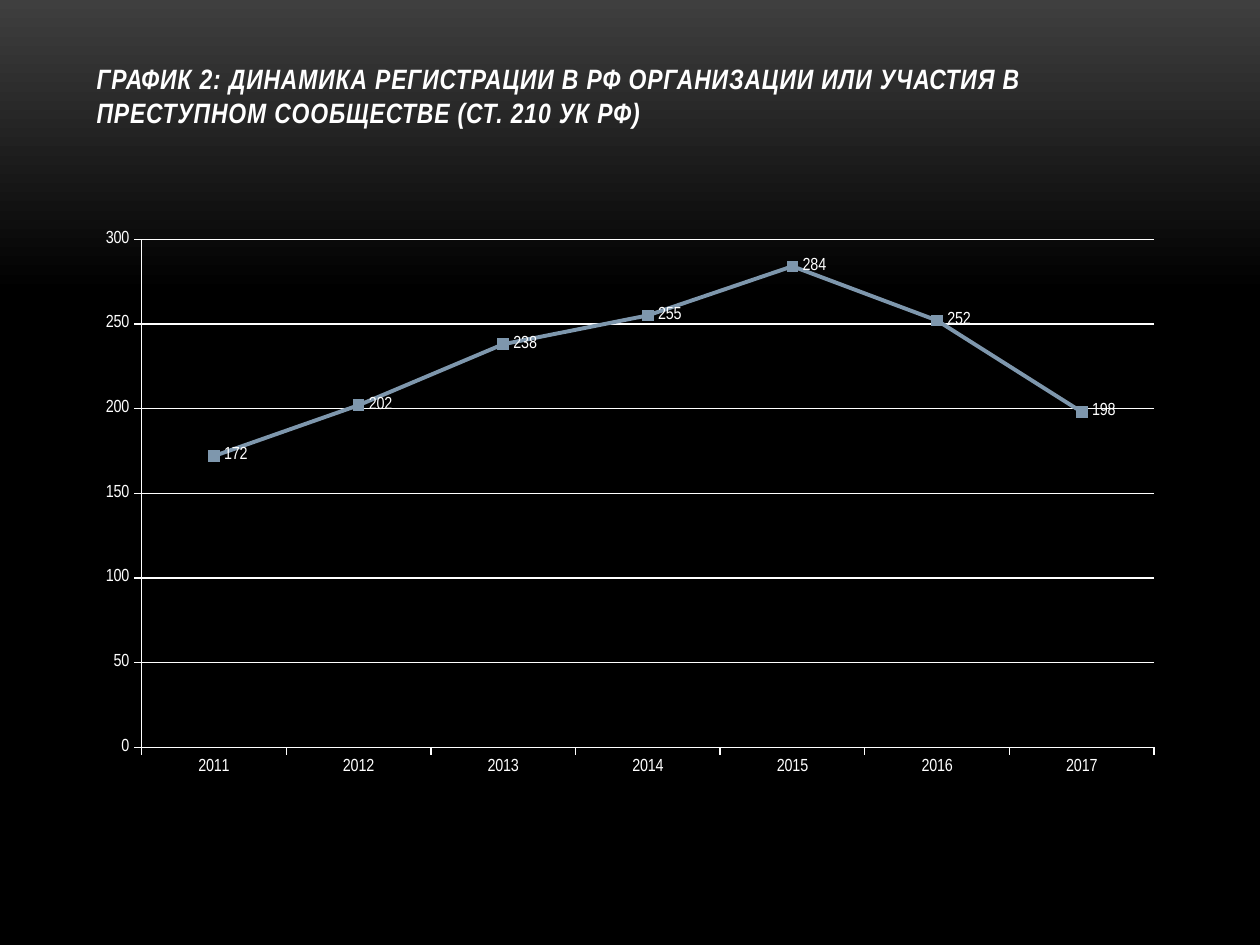
"""Build a slide with a line chart of registered cases by year."""
from dataclasses import dataclass

import pptx
import pptx.chart.data
import pptx.dml.color
import pptx.enum.chart
import pptx.enum.text
import pptx.util

EMU_PER_PX = 914400 // 126
FONT_NAME = "Arial Narrow"
COLORS = {"top": "3F3F3F", "base": "000000", "text": "FFFFFF", "line": "7E97AD"}
TITLE = (
    "ГРАФИК 2: ДИНАМИКА РЕГИСТРАЦИИ В РФ ОРГАНИЗАЦИИ ИЛИ УЧАСТИЯ В "
    "ПРЕСТУПНОМ СООБЩЕСТВЕ (СТ. 210 УК РФ)"
)
CASES = {
    "2011": 172, "2012": 202, "2013": 238, "2014": 255,
    "2015": 284, "2016": 252, "2017": 198,
}


@dataclass
class Box:
    left: int
    top: int
    width: int
    height: int

    def emu(self) -> tuple[int, int, int, int]:
        return px(self.left), px(self.top), px(self.width), px(self.height)


TITLE_BOX = Box(84, 38, 1092, 158)
CHART_BOX = Box(84, 220, 1092, 567)


def px(length: int) -> pptx.util.Emu:
    return pptx.util.Emu(length * EMU_PER_PX)


def color(name: str) -> pptx.dml.color.RGBColor:
    return pptx.dml.color.RGBColor.from_string(COLORS[name])


def paint_background(slide) -> None:
    fill = slide.background.fill
    fill.gradient()
    fill.gradient_angle = 270
    for stop, name, position in zip(fill.gradient_stops, ("top", "base"), (0, 0.31)):
        stop.color.rgb = color(name)
        stop.position = position


def write_title(slide) -> None:
    title = slide.shapes.title
    title.left, title.top, title.width, title.height = TITLE_BOX.emu()
    frame = title.text_frame
    frame.text = TITLE
    frame.word_wrap = True
    frame.auto_size = pptx.enum.text.MSO_AUTO_SIZE.NONE
    frame.vertical_anchor = pptx.enum.text.MSO_ANCHOR.BOTTOM
    frame.margin_bottom = px(67)
    paragraph = frame.paragraphs[0]
    paragraph.alignment = pptx.enum.text.PP_ALIGN.LEFT
    run = paragraph.runs[0]
    run.font.name = FONT_NAME
    run.font.size = pptx.util.Pt(16)
    run.font.bold = run.font.italic = True
    run.font.color.rgb = color("text")
    run.font._element.set("spc", "50")


def style_line(line, name: str, width: float) -> None:
    line.color.rgb = color(name)
    line.width = pptx.util.Pt(width)


def add_cases_chart(slide) -> None:
    data = pptx.chart.data.CategoryChartData()
    data.categories = list(CASES)
    data.add_series("Series 1", list(CASES.values()))
    chart = slide.shapes.add_chart(
        pptx.enum.chart.XL_CHART_TYPE.LINE_MARKERS_STACKED, *CHART_BOX.emu(), data
    ).chart
    chart.has_legend = False
    chart.has_title = False
    chart.font.name = FONT_NAME
    chart.font.size = pptx.util.Pt(10)
    chart.font.color.rgb = color("text")

    for axis in (chart.category_axis, chart.value_axis):
        axis.major_tick_mark = pptx.enum.chart.XL_TICK_MARK.OUTSIDE
        axis.minor_tick_mark = pptx.enum.chart.XL_TICK_MARK.NONE
        style_line(axis.format.line, "text", 0.75)
    chart.category_axis.has_major_gridlines = False
    value_axis = chart.value_axis
    value_axis.minimum_scale, value_axis.maximum_scale = 0, 300
    value_axis.major_unit = 50
    value_axis.has_major_gridlines = True
    style_line(value_axis.major_gridlines.format.line, "text", 0.75)

    plot = chart.plots[0]
    plot.vary_by_categories = False
    series = plot.series[0]
    series.smooth = False
    style_line(series.format.line, "line", 2.25)
    marker = series.marker
    marker.style = pptx.enum.chart.XL_MARKER_STYLE.SQUARE
    marker.size = 6
    marker.format.fill.solid()
    marker.format.fill.fore_color.rgb = color("line")
    marker.format.line.color.rgb = color("line")
    labels = series.data_labels
    labels.show_value = True
    labels.position = pptx.enum.chart.XL_LABEL_POSITION.RIGHT


def main() -> None:
    presentation = pptx.Presentation()
    presentation.slide_width = px(1260)
    presentation.slide_height = px(945)
    slide = presentation.slides.add_slide(presentation.slide_layouts[5])
    paint_background(slide)
    write_title(slide)
    add_cases_chart(slide)
    presentation.save("out.pptx")


if __name__ == "__main__":
    main()
